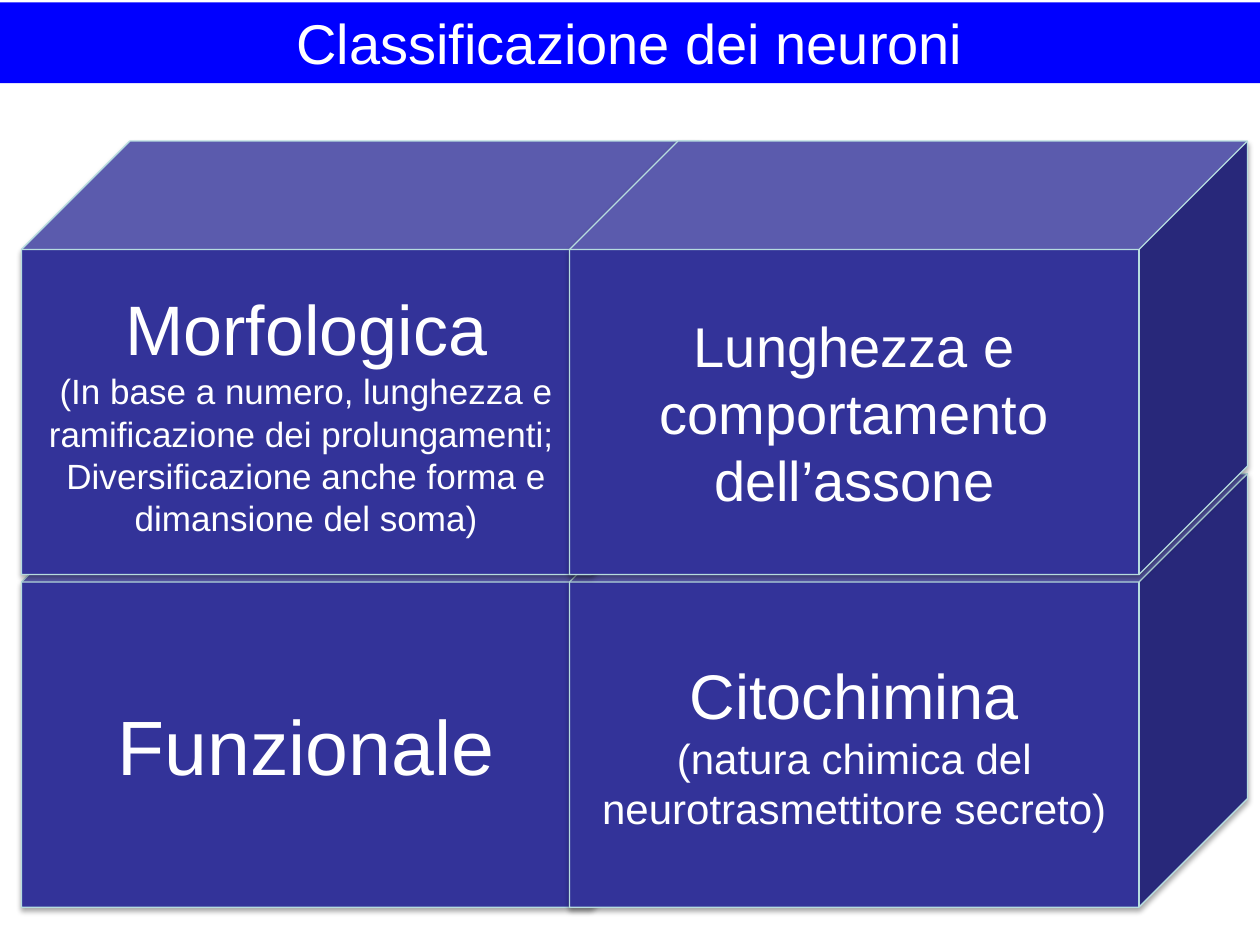
from dataclasses import dataclass

from lxml import etree
from pptx import Presentation
from pptx.dml.color import RGBColor
from pptx.enum.shapes import MSO_SHAPE
from pptx.enum.text import MSO_ANCHOR, PP_ALIGN
from pptx.oxml.ns import qn
from pptx.util import Inches, Pt

RECT, CUBE = MSO_SHAPE.RECTANGLE, MSO_SHAPE.CUBE
TOP, MIDDLE = MSO_ANCHOR.TOP, MSO_ANCHOR.MIDDLE
CENTER = PP_ALIGN.CENTER

WIDTH, HEIGHT = 10, 7.5
LEFT, UPPER = 0.17, 1.12
STEP_X, STEP_Y = 4.35, 2.64
CUBE_W, CUBE_H = 5.38, 3.44


@dataclass(frozen=True)
class Theme:
    font: str = "Arial"
    text: str = "FFFFFF"
    banner: str = "0000FF"
    cube: str = "333399"
    edge: str = "B6DCDF"
    shade: str = "000000"
    title: int = 32
    body: int = 32
    note: int = 20
    detail: int = 24
    head: int = 36
    large: int = 40
    huge: int = 44


THEME = Theme()

# Column, row and (text, size) lines, from back to front
CUBES = [
    (0, 1, [("Funzionale", THEME.huge)]),
    (1, 1, [("Citochimina", THEME.head),
            ("(natura chimica del neurotrasmettitore secreto)", THEME.detail)]),
    (0, 0, [("Morfologica", THEME.large),
            ("(In base a numero, lunghezza e ramificazione dei prolungamenti; ",
             THEME.note),
            ("Diversificazione anche forma e dimansione del soma)", THEME.note)]),
    (1, 0, [("Lunghezza e comportamento dell’assone", THEME.body)]),
]


def color(code):
    return RGBColor.from_string(code)


def add_block(slide, kind, box, fill, lines, anchor):
    """Add a filled shape with centred lines of text and no outline."""
    shape = slide.shapes.add_shape(kind, *map(Inches, box))
    shape.shadow.inherit = False
    shape.fill.solid()
    shape.fill.fore_color.rgb = color(fill)
    shape.line.fill.background()
    frame = shape.text_frame
    frame.word_wrap = True
    frame.vertical_anchor = anchor
    frame.text = "\n".join(text for text, _ in lines)
    for para, (_, size) in zip(frame.paragraphs, lines):
        para.alignment = CENTER
        for run in para.runs:
            run.font.name = THEME.font
            run.font.size = Pt(size)
            run.font.color.rgb = color(THEME.text)
    return shape


def add_shade(shape):
    """Drop a soft shadow straight below the shape."""
    effects = shape.element.spPr.find(qn("a:effectLst"))
    outer = etree.SubElement(
        effects, qn("a:outerShdw"), blurRad=str(Pt(3.1)), dist=str(Pt(1.8)),
        dir="5400000", rotWithShape="0")
    tint = etree.SubElement(outer, qn("a:srgbClr"), val=THEME.shade)
    etree.SubElement(tint, qn("a:alpha"), val="35000")


def add_cube(slide, col, row, lines):
    box = (LEFT + col * STEP_X, UPPER + row * STEP_Y, CUBE_W, CUBE_H)
    cube = add_block(slide, CUBE, box, THEME.cube, lines, MIDDLE)
    cube.line.color.rgb = color(THEME.edge)
    cube.line.width = Pt(0.75)
    add_shade(cube)


def main():
    deck = Presentation()
    deck.slide_width, deck.slide_height = Inches(WIDTH), Inches(HEIGHT)
    slide = deck.slides.add_slide(deck.slide_layouts[6])
    add_block(slide, RECT, (0, 0.02, WIDTH, 0.64), THEME.banner,
              [("Classificazione dei neuroni", THEME.title)], TOP)
    for col, row, lines in CUBES:
        add_cube(slide, col, row, lines)
    deck.save("out.pptx")


if __name__ == "__main__":
    main()
